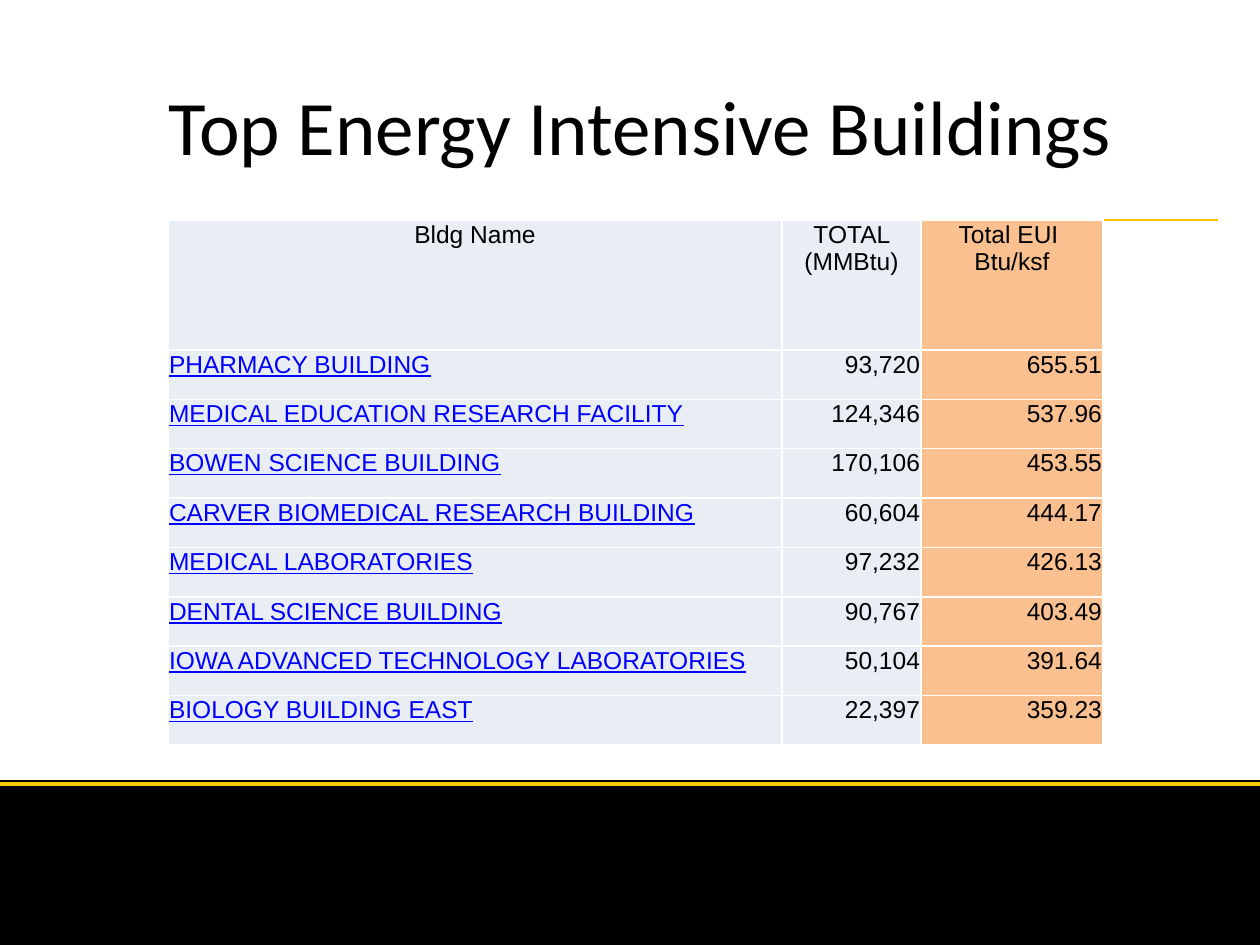
from lxml import etree
from pptx import Presentation
from pptx.dml.color import RGBColor
from pptx.enum.shapes import MSO_CONNECTOR, MSO_SHAPE
from pptx.enum.text import MSO_ANCHOR, PP_ALIGN
from pptx.oxml.ns import qn
from pptx.util import Pt

SCALE = 914400 / 126
LEFT, CENTER, RIGHT = PP_ALIGN.LEFT, PP_ALIGN.CENTER, PP_ALIGN.RIGHT
MIDDLE = MSO_ANCHOR.MIDDLE
RECT = MSO_SHAPE.RECTANGLE
STRAIGHT = MSO_CONNECTOR.STRAIGHT

BLACK, WHITE, BLUE = "000000", "FFFFFF", "0000FF"
GOLD, AMBER = "F4C706", "FEC100"
FILLS = ["E9EDF4", "E9EDF4", "FAC090"]
ALIGNS = [LEFT, RIGHT, RIGHT]
WIDTHS = [614, 139, 182]
HEAD_H, BODY_H = 130, 395

HEADS = ["Bldg Name", "TOTAL (MMBtu)", "Total EUI \nBtu/ksf"]
ROWS = [
    ["PHARMACY BUILDING", "93,720", "655.51"],
    ["MEDICAL EDUCATION RESEARCH FACILITY", "124,346", "537.96"],
    ["BOWEN SCIENCE BUILDING", "170,106", "453.55"],
    ["CARVER BIOMEDICAL RESEARCH BUILDING", "60,604", "444.17"],
    ["MEDICAL LABORATORIES", "97,232", "426.13"],
    ["DENTAL SCIENCE BUILDING", "90,767", "403.49"],
    ["IOWA ADVANCED TECHNOLOGY LABORATORIES", "50,104", "391.64"],
    ["BIOLOGY BUILDING EAST", "22,397", "359.23"],
]


def px(n):
    return round(n * SCALE)


def rgb(code):
    return RGBColor.from_string(code)


def write(frame, text, align, color, **form):
    frame.text = text
    for para in frame.paragraphs:
        para.alignment = align
        for run in para.runs:
            run.font.color.rgb = rgb(color)
            for key, value in form.items():
                setattr(run.font, key, value)


def add_bar(slide, left, top, width, height, fill):
    bar = slide.shapes.add_shape(RECT, px(left), px(top), px(width), px(height))
    bar.shadow.inherit = False
    bar.fill.solid()
    bar.fill.fore_color.rgb = rgb(fill)
    bar.line.color.rgb = rgb(BLACK)
    bar.line.width = Pt(0.75)


def add_rule(slide, left, right, top, color):
    rule = slide.shapes.add_connector(STRAIGHT, px(left), px(top), px(right), px(top))
    rule.line.color.rgb = rgb(color)
    rule.line.width = Pt(0.75)
    etree.SubElement(rule.element.spPr, qn("a:effectLst"))


def add_title(slide, text):
    box = slide.shapes.add_textbox(px(63), px(38), px(1155), px(173))
    frame = box.text_frame
    frame.word_wrap = True
    frame.vertical_anchor = MIDDLE
    write(frame, text, CENTER, BLACK, size=Pt(44), name="Calibri")


def add_edges(cell):
    """Draw thin white borders; they must come before the cell fill."""
    props = cell._tc.get_or_add_tcPr()
    for tag in ("a:lnL", "a:lnR", "a:lnT", "a:lnB"):
        edge = etree.SubElement(props, qn(tag), w=str(Pt(1)))
        solid = etree.SubElement(edge, qn("a:solidFill"))
        etree.SubElement(solid, qn("a:srgbClr"), val=WHITE)


def fill_cell(cell, text, fill, align, color, underline):
    for side, size in {"left": 1, "right": 1, "top": 1, "bottom": 0}.items():
        setattr(cell, "margin_" + side, px(size))
    add_edges(cell)
    cell.fill.solid()
    cell.fill.fore_color.rgb = rgb(fill)
    write(cell.text_frame, text, align, color,
          size=Pt(14), name="Arial", underline=underline)


def add_grid(slide):
    data = [HEADS] + ROWS
    grid = slide.shapes.add_table(
        len(data), len(HEADS), px(168), px(220),
        px(sum(WIDTHS)), px(HEAD_H + BODY_H)).table
    for col, width in zip(grid.columns, WIDTHS):
        col.width = px(width)
    for r, texts in enumerate(data):
        grid.rows[r].height = px(BODY_H / len(ROWS) if r else HEAD_H)
        for c, text in enumerate(texts):
            name = r > 0 and c == 0
            fill_cell(grid.cell(r, c), text, FILLS[c],
                      ALIGNS[c] if r else CENTER, BLUE if name else BLACK, name)


def main():
    deck = Presentation()
    deck.slide_width, deck.slide_height = px(1260), px(945)
    slide = deck.slides.add_slide(deck.slide_layouts[6])
    add_bar(slide, 0, 787, 1260, 158, BLACK)
    add_rule(slide, 199, 1218, 220, AMBER)
    add_bar(slide, -10, 781, 1291, 6, GOLD)
    add_title(slide, "Top Energy Intensive Buildings")
    add_grid(slide)
    deck.save("out.pptx")


if __name__ == "__main__":
    main()
